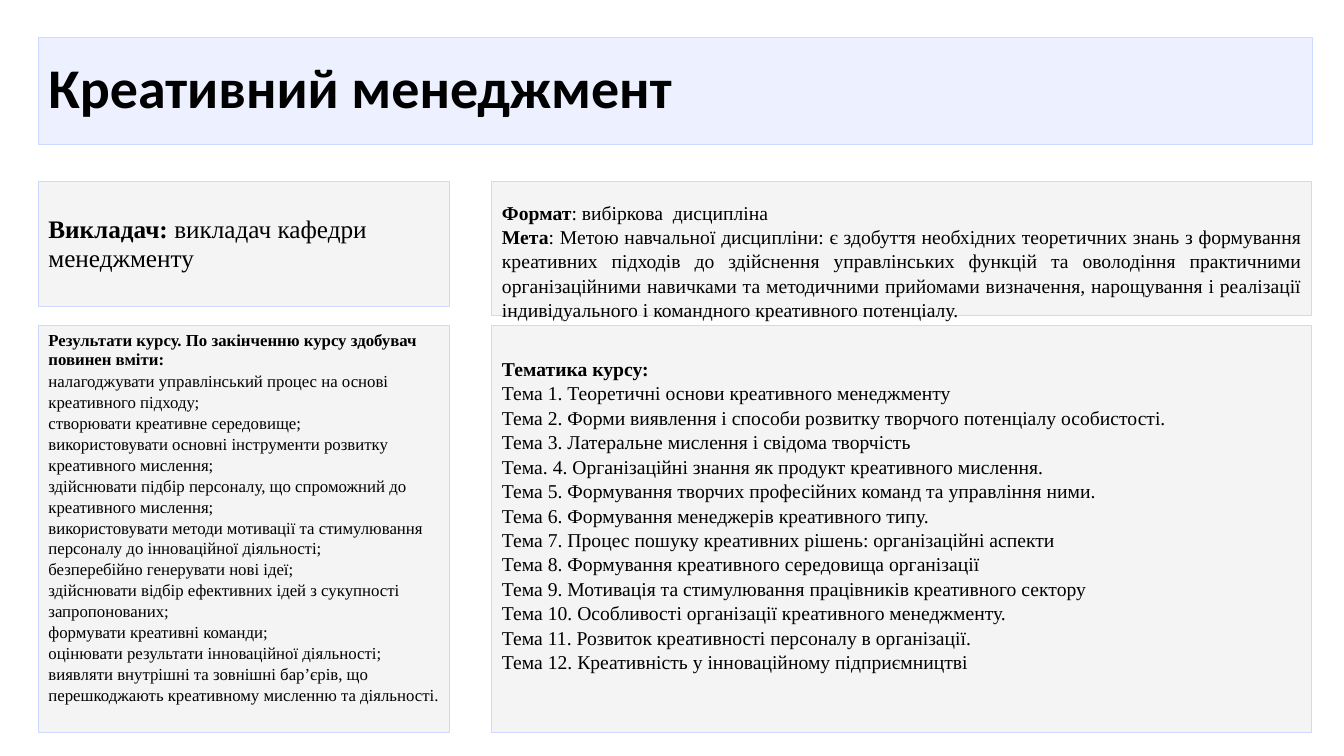
"""Build the course slide for creative management."""
from dataclasses import dataclass

from lxml.etree import SubElement
from pptx import Presentation
from pptx.dml.color import RGBColor as Rgb
from pptx.enum.text import MSO_ANCHOR as Anchor, MSO_AUTO_SIZE as Fit, PP_ALIGN as Align
from pptx.oxml.ns import qn
from pptx.shapes.placeholder import SlidePlaceholder as Holder
from pptx.text.text import _Paragraph as Para
from pptx.util import Inches, Pt

WIDE, HIGH = Inches(13.33), Inches(7.5)


@dataclass(frozen=True)
class Theme:
    head: str = "Calibri"
    body: str = "Times New Roman"
    ink: str = "000000"
    edge: str = "CDD9FF"
    blue: str = "E5EBFF"
    grey: str = "F0F0F0"
    huge: int = 40
    large: int = 18
    mid: int = 14
    small: int = 12


@dataclass(frozen=True)
class Line:
    bold: str = ""
    plain: str = ""
    gap: float = 1.04


@dataclass(frozen=True)
class Panel:
    slot: int
    left: float
    top: float
    width: float
    height: float
    size: int
    lines: list[Line]
    inset: float = 0.05
    anchor: Anchor = Anchor.TOP
    align: Align = Align.LEFT
    font: str = Theme.body
    fill: str = Theme.grey
    alpha: int = 69


LEFT, RIGHT = 2.85, 36.6
SLIM, BROAD = 30.6, 61
UPPER, LOWER, TALL = 24, 43.07, 53.87

SKILLS = [
    "налагоджувати управлінський процес на основі креативного підходу;",
    "створювати креативне середовище;",
    "використовувати основні інструменти розвитку креативного мислення;",
    "здійснювати підбір персоналу, що спроможний до креативного мислення;",
    "використовувати методи мотивації та стимулювання персоналу до інноваційної діяльності;",
    "безперебійно генерувати нові ідеї;",
    "здійснювати відбір ефективних ідей з сукупності запропонованих;",
    "формувати креативні команди;",
    "оцінювати результати інноваційної діяльності;",
    "виявляти внутрішні та зовнішні бар’єрів, що перешкоджають креативному мисленню та діяльності.",
]
TOPICS = [
    "Тема 1. Теоретичні основи креативного менеджменту",
    "Тема 2. Форми виявлення і способи розвитку творчого потенціалу особистості.",
    "Тема 3. Латеральне мислення і свідома творчість",
    "Тема. 4. Організаційні знання як продукт креативного мислення.",
    "Тема 5. Формування творчих професійних команд та управління ними.",
    "Тема 6. Формування менеджерів креативного типу.",
    "Тема 7. Процес пошуку креативних рішень: організаційні аспекти",
    "Тема 8. Формування креативного середовища організації",
    "Тема 9. Мотивація та стимулювання працівників креативного сектору",
    "Тема 10. Особливості організації креативного менеджменту.",
    "Тема 11. Розвиток креативності персоналу в організації.",
    "Тема 12. Креативність у інноваційному підприємництві",
]
AIM = (
    ": Метою навчальної дисципліни: є здобуття необхідних теоретичних знань з формування "
    "креативних підходів до здійснення управлінських функцій та оволодіння практичними "
    "організаційними навичками та методичними прийомами визначення, нарощування і реалізації "
    "індивідуального і командного креативного потенціалу."
)
PANELS = [
    Panel(0, LEFT, 4.93, 94.8, 14.13, Theme.huge, [Line("Креативний менеджмент", gap=0.9)],
          anchor=Anchor.MIDDLE, font=Theme.head, fill=Theme.blue, alpha=70),
    Panel(1, LEFT, UPPER, SLIM, 16.53, Theme.large,
          [Line("Викладач: ", "викладач кафедри менеджменту", 0.97)], anchor=Anchor.MIDDLE),
    Panel(2, LEFT, LOWER, SLIM, TALL, Theme.small,
          [Line("Результати курсу. По закінченню курсу здобувач повинен вміти:", gap=0.97),
           *(Line(plain=skill) for skill in SKILLS)]),
    Panel(3, RIGHT, UPPER, BROAD, 17.73, Theme.mid,
          [Line("Формат", ": вибіркова  дисципліна"), Line("Мета", AIM)],
          inset=0.18, align=Align.JUSTIFY),
    Panel(4, RIGHT, LOWER, BROAD, TALL, Theme.mid,
          [Line("Тематика курсу:"), *(Line(plain=topic) for topic in TOPICS)], inset=0.3),
]


def write(para: Para, line: Line, panel: Panel) -> None:
    """Write one line with its bold lead and plain rest."""
    props = para._p.get_or_add_pPr()
    props.set("marL", "0")
    props.set("indent", "0")
    SubElement(props, qn("a:buNone"))
    para.alignment = panel.align
    para.line_spacing = line.gap
    para.space_before = para.space_after = Pt(0)
    para.font.name = panel.font
    para.font.size = Pt(panel.size)
    para.font.color.rgb = Rgb.from_string(Theme.ink)
    for text, bold in ((line.bold, True), (line.plain, False)):
        if text:
            run = para.add_run()
            run.text = text
            run.font.bold = bold


def draw(shape: Holder, panel: Panel) -> None:
    """Place, paint and fill one placeholder."""
    shape.left, shape.width = (int(WIDE * part / 100) for part in (panel.left, panel.width))
    shape.top, shape.height = (int(HIGH * part / 100) for part in (panel.top, panel.height))
    shape.fill.solid()
    shape.fill.fore_color.rgb = Rgb.from_string(panel.fill)
    tint = shape.fill._xPr.find(qn("a:solidFill"))[0]
    SubElement(tint, qn("a:alpha"), val=str(panel.alpha * 1000))
    shape.line.color.rgb = Rgb.from_string(Theme.edge)
    shape.line.width = Pt(0.75)
    frame = shape.text_frame
    frame.word_wrap = True
    frame.auto_size = Fit.NONE
    frame.vertical_anchor = panel.anchor
    frame.margin_left = frame.margin_right = Inches(0.1)
    frame.margin_top, frame.margin_bottom = Inches(panel.inset), Inches(0.05)
    for rank, line in enumerate(panel.lines):
        write(frame.add_paragraph() if rank else frame.paragraphs[0], line, panel)


def main() -> None:
    """Make the deck and save it."""
    deck = Presentation()
    deck.slide_width, deck.slide_height = WIDE, HIGH
    slide = deck.slides.add_slide(deck.slide_layouts.get_by_name("Comparison"))
    slots = {shape.placeholder_format.idx: shape for shape in slide.placeholders}
    for panel in PANELS:
        draw(slots[panel.slot], panel)
    deck.save("out.pptx")


if __name__ == "__main__":
    main()
